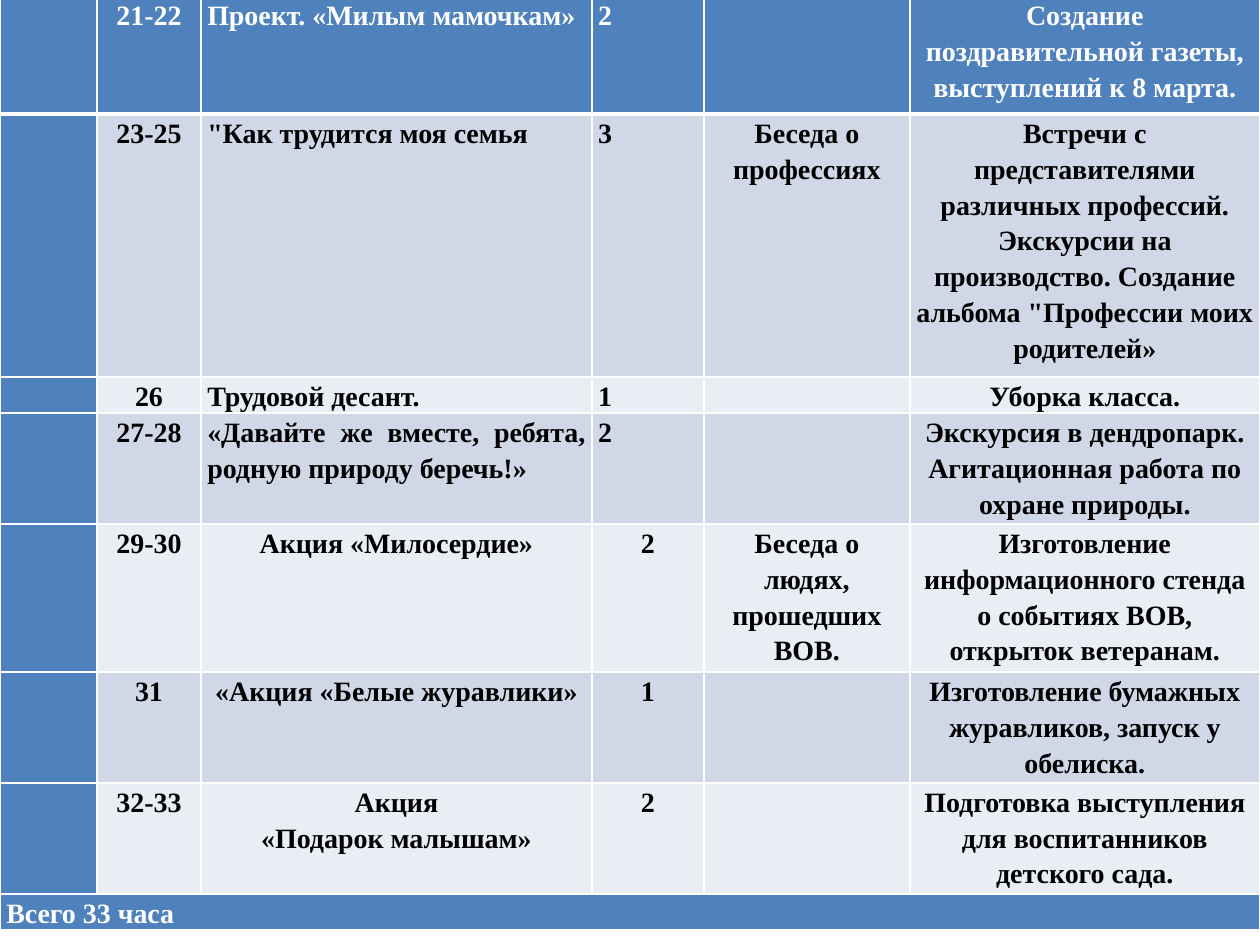
import pptx
import pptx.dml.color
import pptx.enum.text
import pptx.oxml.ns
import pptx.util
from lxml import etree

PX = pptx.util.Inches(1) // 126
BLUE = pptx.dml.color.RGBColor(0x4F, 0x81, 0xBD)
DARK_BAND = pptx.dml.color.RGBColor(0xD0, 0xD8, 0xE8)
LIGHT_BAND = pptx.dml.color.RGBColor(0xE9, 0xED, 0xF4)
WHITE = pptx.dml.color.RGBColor(0xFF, 0xFF, 0xFF)
BLACK = pptx.dml.color.RGBColor(0, 0, 0)

LEFT = pptx.enum.text.PP_ALIGN.LEFT
CENTER = pptx.enum.text.PP_ALIGN.CENTER
JUSTIFY = pptx.enum.text.PP_ALIGN.JUSTIFY

COLUMN_WIDTHS = [97, 104, 391, 112, 206, 350]
ROW_HEIGHTS = [118, 263, 36, 111, 148, 111, 111, 36]

# Lesson numbers, topic, hours, talk, practical work
LESSONS = [
    ["21-22", "Проект. «Милым мамочкам»", "2", "",
     "Создание поздравительной газеты, выступлений к 8 марта."],
    ["23-25", "\"Как трудится моя семья", "3", "Беседа о профессиях",
     "Встречи с представителями различных профессий. Экскурсии на "
     "производство. Создание альбома \"Профессии моих родителей»"],
    ["26", "Трудовой десант.", "1", "", "Уборка класса."],
    ["27-28", "«Давайте же вместе, ребята, родную природу беречь!»", "2", "",
     "Экскурсия в дендропарк. Агитационная работа по охране природы."],
    ["29-30", "Акция «Милосердие»", "2", "Беседа о людях, прошедших ВОВ.",
     "Изготовление информационного стенда о событиях ВОВ, открыток ветеранам."],
    ["31", "«Акция «Белые журавлики»", "1", "",
     "Изготовление бумажных журавликов, запуск у обелиска."],
    ["32-33", "Акция\n«Подарок малышам»", "2", "",
     "Подготовка выступления для воспитанников детского сада."],
]
TOTAL = "Всего 33 часа"
JUSTIFIED_ROWS = range(4)
JUSTIFIED_COLUMNS = (2, 3)


class SlideBuilder:
    font_name = "Times New Roman"
    font_size = pptx.util.Pt(16)
    line_spacing = 1.15
    side_margin = pptx.util.Inches(0.05)

    def __init__(self, slide):
        self.slide = slide

    def table(self, left, top, widths, heights):
        frame = self.slide.shapes.add_table(
            len(heights), len(widths), left * PX, top * PX,
            sum(widths) * PX, sum(heights) * PX)
        table = frame.table
        for column, width in zip(table.columns, widths):
            column.width = width * PX
        for row, height in zip(table.rows, heights):
            row.height = height * PX
        return table

    def cell(self, cell, text, fill, color, align, bottom_width=1):
        cell.margin_left = cell.margin_right = self.side_margin
        cell.margin_top = cell.margin_bottom = 0
        cell.text = text
        for para in cell.text_frame.paragraphs:
            para.alignment = align
            para.line_spacing = self.line_spacing
            para.font.name = self.font_name
            para.font.size = self.font_size
            para.font.bold = True
            para.font.color.rgb = color
        self.borders(cell, bottom_width)
        cell.fill.solid()
        cell.fill.fore_color.rgb = fill

    def borders(self, cell, bottom_width):
        properties = cell._tc.get_or_add_tcPr()
        qn = pptx.oxml.ns.qn
        for side in ("L", "R", "T", "B"):
            width = bottom_width if side == "B" else 1
            line = etree.SubElement(properties, qn(f"a:ln{side}"),
                                    w=str(pptx.util.Pt(width)))
            solid = etree.SubElement(line, qn("a:solidFill"))
            etree.SubElement(solid, qn("a:srgbClr"), val=str(WHITE))


def main():
    deck = pptx.Presentation()
    deck.slide_width = pptx.util.Inches(10)
    deck.slide_height = pptx.util.Inches(7.5)
    builder = SlideBuilder(deck.slides.add_slide(deck.slide_layouts[6]))
    table = builder.table(0, -4, COLUMN_WIDTHS, ROW_HEIGHTS)

    # Lessons: blue first row and first column, banded body
    for row, lesson in enumerate(LESSONS):
        band = DARK_BAND if row % 2 else LIGHT_BAND
        for column, text in enumerate(["", *lesson]):
            justified = row in JUSTIFIED_ROWS and column in JUSTIFIED_COLUMNS
            builder.cell(
                table.cell(row, column), text,
                fill=BLUE if row == 0 or column == 0 else band,
                color=WHITE if row == 0 else BLACK,
                align=JUSTIFY if justified else CENTER,
                bottom_width=3 if row == 0 else 1)

    # Total across the whole last row
    last = len(LESSONS)
    for column in range(len(COLUMN_WIDTHS)):
        builder.cell(table.cell(last, column), "" if column else TOTAL,
                     BLUE, WHITE, LEFT)
    table.cell(last, 0).merge(table.cell(last, len(COLUMN_WIDTHS) - 1))

    deck.save("out.pptx")


if __name__ == "__main__":
    main()
